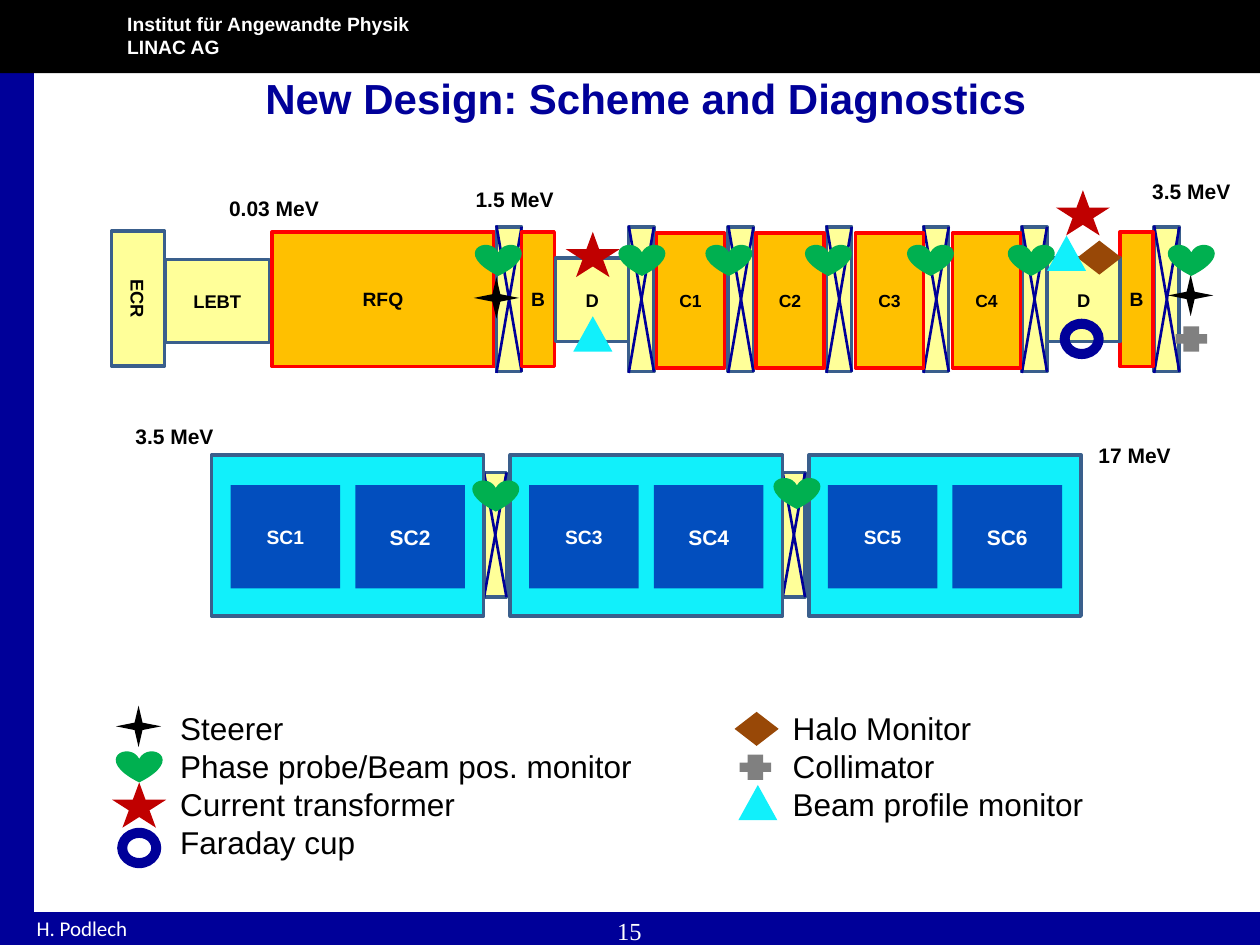
from dataclasses import dataclass

from lxml.etree import SubElement
from pptx import Presentation
from pptx.dml.color import RGBColor
from pptx.enum.shapes import MSO_CONNECTOR, MSO_SHAPE
from pptx.enum.text import MSO_ANCHOR, MSO_AUTO_SIZE, PP_ALIGN
from pptx.oxml.ns import qn
from pptx.util import Inches, Pt


@dataclass(frozen=True)
class Theme:
    navy: str = "000099"
    black: str = "000000"
    white: str = "FFFFFF"
    outline: str = "3A5F8C"
    beam: str = "FFFF99"
    cavity: str = "FFC000"
    red: str = "FF0000"
    cyan: str = "11F0FB"
    blue: str = "024EBE"
    font: str = "Arial"
    footer_font: str = "Calibri"
    number_font: str = "Times New Roman"
    title: float = 24
    legend: float = 18
    number: float = 14
    label: float = 12
    block: float = 11
    small: float = 10.5
    tiny: float = 10
    border: float = 2
    cross: float = 1.5


THEME = Theme()

SYMBOLS = {
    "steerer": (MSO_SHAPE.STAR_4_POINT, 0.36, 0.33, THEME.black),
    "probe": (MSO_SHAPE.HEART, 0.37, 0.25, "00B050"),
    "transformer": (MSO_SHAPE.STAR_5_POINT, 0.43, 0.36, "C00000"),
    "cup": (MSO_SHAPE.DONUT, 0.35, 0.32, THEME.navy),
    "halo": (MSO_SHAPE.DIAMOND, 0.35, 0.27, "984807"),
    "collimator": (MSO_SHAPE.CROSS, 0.25, 0.2, "808080"),
    "profile": (MSO_SHAPE.ISOSCELES_TRIANGLE, 0.31, 0.28, THEME.cyan),
}


def color(value):
    return RGBColor.from_string(value)


def set_values(target, values):
    for name, value in values.items():
        setattr(target, name, value)


def write(box, lines, size, ink, bold=True, font=THEME.font, align=PP_ALIGN.CENTER,
          insets=(0, 0, 0, 0), anchor=MSO_ANCHOR.TOP, spacing=None):
    frame = box.text_frame
    sides = ("margin_left", "margin_top", "margin_right", "margin_bottom")
    set_values(frame, {"word_wrap": True, "auto_size": MSO_AUTO_SIZE.NONE,
                       "vertical_anchor": anchor,
                       **{side: Inches(inset) for side, inset in zip(sides, insets)}})
    for index, line in enumerate(lines):
        para = frame.add_paragraph() if index else frame.paragraphs[0]
        set_values(para, {"alignment": align, "space_before": Pt(0), "line_spacing": spacing})
        span = para.add_run()
        span.text = line
        set_values(span.font, {"size": Pt(size), "bold": bold, "name": font})
        span.font.color.rgb = color(ink)


def add_block(page, place, fill, border=None, text=None, size=THEME.block,
              ink=THEME.black, kind=MSO_SHAPE.RECTANGLE):
    shape = page.shapes.add_shape(kind, *map(Inches, place))
    shape.shadow.inherit = False
    shape.fill.solid()
    shape.fill.fore_color.rgb = color(fill)
    if border:
        shape.line.color.rgb = color(border)
        shape.line.width = Pt(THEME.border)
    else:
        shape.line.fill.background()
    if text:
        write(shape, [text], size, ink, anchor=MSO_ANCHOR.MIDDLE)
    return shape


def add_text(page, place, lines, size, ink, **options):
    write(page.shapes.add_textbox(*map(Inches, place)), lines, size, ink, **options)


def add_line(page, start, end):
    line = page.shapes.add_connector(MSO_CONNECTOR.STRAIGHT, *map(Inches, start + end))
    line.line.color.rgb = color(THEME.navy)
    line.line.width = Pt(THEME.cross)
    SubElement(line._element.spPr, qn("a:effectLst"))


def add_lens(page, left, top, width, height):
    right, bottom = left + width, top + height + 0.01
    add_block(page, (left, top, width, height), THEME.beam, THEME.outline)
    add_line(page, (right, top), (left, bottom))
    add_line(page, (left, top - 0.01), (right, bottom - 0.01))


def add_symbol(page, name, left, top):
    kind, width, height, fill = SYMBOLS[name]
    shape = add_block(page, (left, top, width, height), fill, kind=kind)
    if name == "collimator":
        shape.adjustments[0] = 0.314


def add_list(box, place, lines):
    set_values(box, dict(zip(("left", "top", "width", "height"), map(Inches, place))))
    write(box, lines, THEME.legend, THEME.black, bold=False, align=PP_ALIGN.LEFT,
          insets=(0.1, 0.05, 0.1, 0.05), spacing=Pt(THEME.legend * 1.2))
    for para in box.text_frame.paragraphs:
        properties = para._p.get_or_add_pPr()
        properties.set("marL", "0")
        properties.set("indent", "0")
        SubElement(properties, qn("a:buNone"))


def add_frame(page):
    add_block(page, (0, 0, 0.27, 7.5), THEME.navy)
    add_block(page, (0, 0, 10, 0.58), THEME.black)
    add_block(page, (0, 7.24, 10, 0.26), THEME.navy)
    add_text(page, (0.98, 0.09, 2.56, 0.39), ["Institut für Angewandte Physik", "LINAC AG"],
             THEME.block, THEME.white, align=PP_ALIGN.LEFT, insets=(0.03, 0.01, 0.03, 0.01),
             spacing=Pt(THEME.block * 1.2))
    add_text(page, (0.27, 7.26, 1.89, 0.24), ["H. Podlech"], THEME.label, THEME.white,
             bold=False, font=THEME.footer_font, align=PP_ALIGN.LEFT,
             insets=(0.02, 0.01, 0.02, 0.01))
    add_text(page, (4.4, 7.22, 1.19, 0.23), ["15"], THEME.number, THEME.white,
             bold=False, font=THEME.number_font, insets=(0.1, 0.05, 0.1, 0.05))


def add_front_end(page):
    source = add_block(page, (0.56, 2.16, 1.07, 0.42), THEME.beam, THEME.outline,
                       "ECR", THEME.small)
    source.rotation = 90
    add_block(page, (1.31, 2.06, 0.83, 0.66), THEME.beam, THEME.outline, "LEBT", THEME.small)
    add_block(page, (2.16, 1.84, 1.76, 1.07), THEME.cavity, THEME.red, "RFQ")
    for left in (3.94, 4.99, 5.78, 6.56, 7.33, 8.11, 9.16):
        add_lens(page, left, 1.8, 0.2, 1.15)
    for left in (4.14, 8.89):
        add_block(page, (left, 1.84, 0.26, 1.07), THEME.cavity, THEME.red, "B")
    for number, left in enumerate((5.21, 6, 6.79, 7.56), 1):
        add_block(page, (left, 1.85, 0.54, 1.07), THEME.cavity, THEME.red,
                  f"C{number}", THEME.tiny)
    for left in (4.41, 8.31):
        add_block(page, (left, 2.05, 0.58, 0.66), THEME.beam, THEME.outline, "D", THEME.small)


def add_cryomodules(page):
    for left in (3.84, 6.21):
        add_lens(page, left, 3.75, 0.18, 0.99)
    for module in range(3):
        left = 1.68 + 2.37 * module
        add_block(page, (left, 3.61, 2.16, 1.28), THEME.cyan, THEME.outline)
        for side, size in enumerate((THEME.block, THEME.label)):
            add_block(page, (left + 0.15 + 0.99 * side, 3.85, 0.87, 0.82), THEME.blue,
                      text=f"SC{2 * module + side + 1}", size=size, ink=THEME.white)


def add_diagnostics(page):
    places = {
        "steerer": [(0.92, 5.6), (3.76, 2.2), (9.27, 2.18)],
        "transformer": [(0.89, 6.21), (4.49, 1.84), (8.38, 1.51)],
        "cup": [(0.93, 6.57), (8.41, 2.53)],
        "halo": [(5.83, 5.65), (8.55, 1.91)],
        "collimator": [(5.87, 5.99), (9.33, 2.59)],
        "profile": [(5.86, 6.23), (4.55, 2.51), (8.31, 1.87)],
        "probe": [(0.92, 5.96), (3.75, 3.81), (6.14, 3.79)]
        + [(left, 1.94) for left in (3.77, 4.91, 5.6, 6.39, 7.2, 8, 9.27)],
    }
    for name, spots in places.items():
        for left, top in spots:
            add_symbol(page, name, left, top)


def add_energies(page):
    for text, left, top in (("0.03 MeV", 1.71, 1.5), ("1.5 MeV", 3.62, 1.43),
                            ("3.5 MeV", 0.92, 3.31), ("3.5 MeV", 8.99, 1.37),
                            ("17 MeV", 8.54, 3.46)):
        add_text(page, (left, top, 0.93, 0.3), [text], THEME.label, THEME.black,
                 insets=(0, 0.05, 0, 0.05))


def main():
    deck = Presentation()
    deck.slide_width, deck.slide_height = Inches(10), Inches(7.5)
    page = deck.slides.add_slide(deck.slide_layouts[3])
    title, left_list, right_list = page.placeholders
    set_values(title, {"left": Inches(0.93), "top": Inches(0.58),
                       "width": Inches(8.39), "height": Inches(0.42)})
    write(title, ["New Design: Scheme and Diagnostics"], THEME.title, THEME.navy,
          insets=(0.09, 0.01, 0.09, 0.04), anchor=MSO_ANCHOR.MIDDLE)
    add_list(left_list, (1.33, 5.58, 3.82, 1.31),
             ["Steerer", "Phase probe/Beam pos. monitor", "Current transformer", "Faraday cup"])
    add_list(right_list, (6.19, 5.58, 3.05, 1.01),
             ["Halo Monitor", "Collimator", "Beam profile monitor"])
    add_frame(page)
    add_front_end(page)
    add_cryomodules(page)
    add_diagnostics(page)
    add_energies(page)
    deck.save("out.pptx")


if __name__ == "__main__":
    main()
